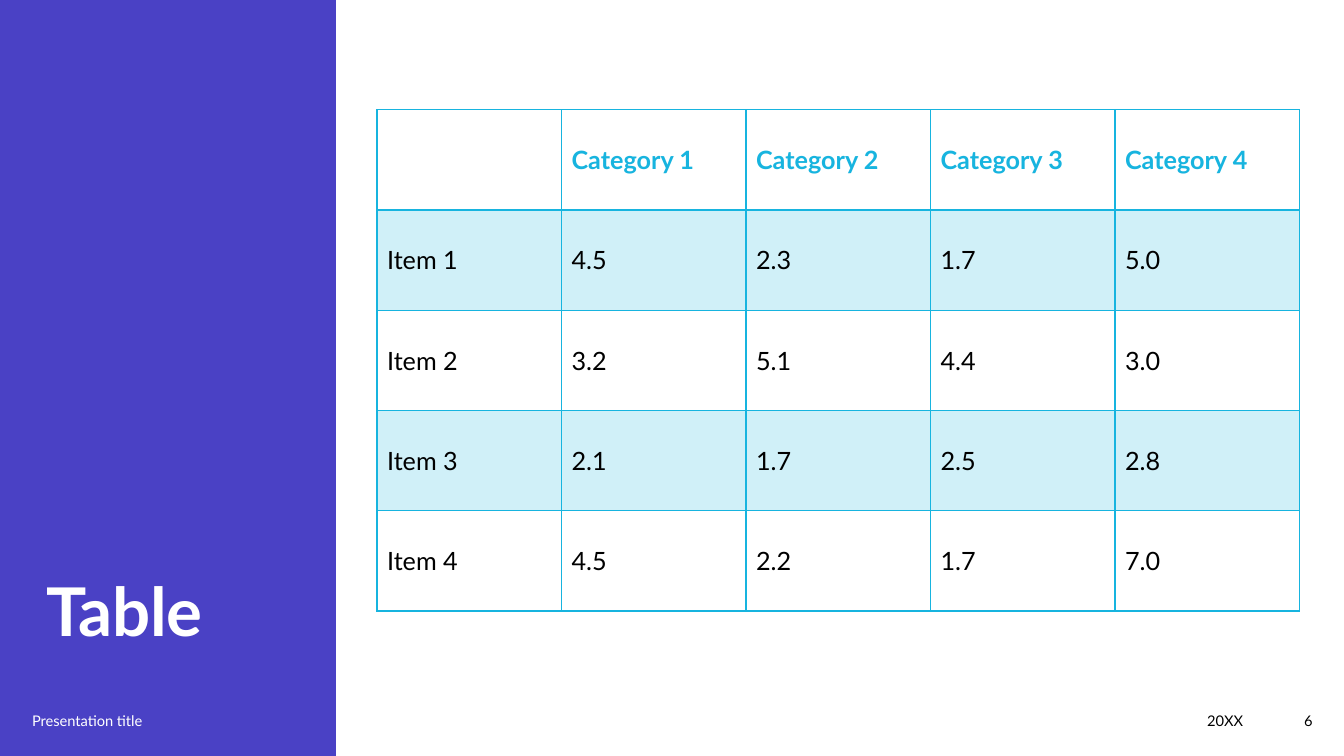
from lxml.etree import SubElement
from pptx import Presentation
from pptx.dml.color import RGBColor
from pptx.enum.shapes import MSO_SHAPE
from pptx.enum.text import MSO_ANCHOR, PP_ALIGN
from pptx.oxml.ns import qn
from pptx.util import Pt

FONT = "Lato"
PURPLE = "4A41C5"
CYAN = "17B4DF"
WHITE = "FFFFFF"
BLACK = "000000"
COLUMN_WIDTH = 131.8
ROW_HEIGHT = 71.6
ROWS = [
    ["", "Category 1", "Category 2", "Category 3", "Category 4"],
    ["Item 1", "4.5", "2.3", "1.7", "5.0"],
    ["Item 2", "3.2", "5.1", "4.4", "3.0"],
    ["Item 3", "2.1", "1.7", "2.5", "2.8"],
    ["Item 4", "4.5", "2.2", "1.7", "7.0"],
]


def paint(color_format, color):
    color_format.rgb = RGBColor.from_string(color)


def add_span(para, text, size, color, bold=False):
    span = para.add_run()
    span.text = text
    span.font.name = FONT
    span.font.size = Pt(size)
    span.font.bold = bold
    paint(span.font.color, color)
    return span


def add_panel(page, left, top, width, height, color):
    panel = page.shapes.add_shape(
        MSO_SHAPE.RECTANGLE, Pt(left), Pt(top), Pt(width), Pt(height)
    )
    panel.shadow.inherit = False
    panel.fill.solid()
    paint(panel.fill.fore_color, color)
    panel.line.fill.background()


def add_text(page, left, top, width, height, text, size, color,
             bold=False, align=PP_ALIGN.LEFT, anchor=MSO_ANCHOR.MIDDLE):
    box = page.shapes.add_textbox(Pt(left), Pt(top), Pt(width), Pt(height))
    frame = box.text_frame
    frame.word_wrap = True
    frame.vertical_anchor = anchor
    para = frame.paragraphs[0]
    para.alignment = align
    return add_span(para, text, size, color, bold)


def add_border(cell, side, width, color):
    properties = cell._tc.get_or_add_tcPr()
    line = SubElement(properties, qn(f"a:ln{side}"), w=str(Pt(width)))
    fill = SubElement(line, qn("a:solidFill"))
    SubElement(fill, qn("a:srgbClr"), val=color)


def fill_cell(cell, banded):
    if not banded:
        cell.fill.background()
        return
    cell.fill.solid()
    paint(cell.fill.fore_color, CYAN)
    color = cell._tc.tcPr.find(f"{qn('a:solidFill')}/{qn('a:srgbClr')}")
    SubElement(color, qn("a:alpha"), val="20000")


def style_cell(cell, text, row):
    header = row == 0
    widths = {"L": 1, "R": 1, "T": 2 if row == 1 else 1, "B": 2 if header else 1}
    for side, width in widths.items():
        add_border(cell, side, width, CYAN)
    fill_cell(cell, row % 2 == 1)
    cell.vertical_anchor = MSO_ANCHOR.MIDDLE
    if text:
        para = cell.text_frame.paragraphs[0]
        add_span(para, text, 18, CYAN if header else BLACK, header)


def add_data_table(page, left, top, rows):
    column_count = len(rows[0])
    table = page.shapes.add_table(
        len(rows), column_count, Pt(left), Pt(top),
        Pt(COLUMN_WIDTH * column_count), Pt(ROW_HEIGHT * len(rows)),
    ).table
    table.horz_banding = False
    for column in table.columns:
        column.width = Pt(COLUMN_WIDTH)
    for row, values in enumerate(rows):
        table.rows[row].height = Pt(ROW_HEIGHT)
        for column, text in enumerate(values):
            style_cell(table.cell(row, column), text, row)


def main():
    deck = Presentation()
    deck.slide_width = Pt(960)
    deck.slide_height = Pt(540)
    page = deck.slides.add_slide(deck.slide_layouts[6])

    add_panel(page, 0, 0, 240, 540, PURPLE)
    title = add_text(page, 26, 78.5, 188, 389.5, "Table", 48, WHITE,
                     bold=True, anchor=MSO_ANCHOR.BOTTOM)
    title._r.get_or_add_rPr().set("spc", "-20")
    add_data_table(page, 269.3, 78.5, ROWS)

    add_text(page, 15.8, 500.5, 218, 28.8, "Presentation title", 10.5, WHITE)
    add_text(page, 552.2, 500.5, 342.8, 28.8, "20XX", 10.5, BLACK,
             align=PP_ALIGN.RIGHT)
    add_text(page, 895, 500.5, 49.7, 28.8, "6", 10.5, BLACK,
             align=PP_ALIGN.RIGHT)

    deck.save("out.pptx")


if __name__ == "__main__":
    main()
